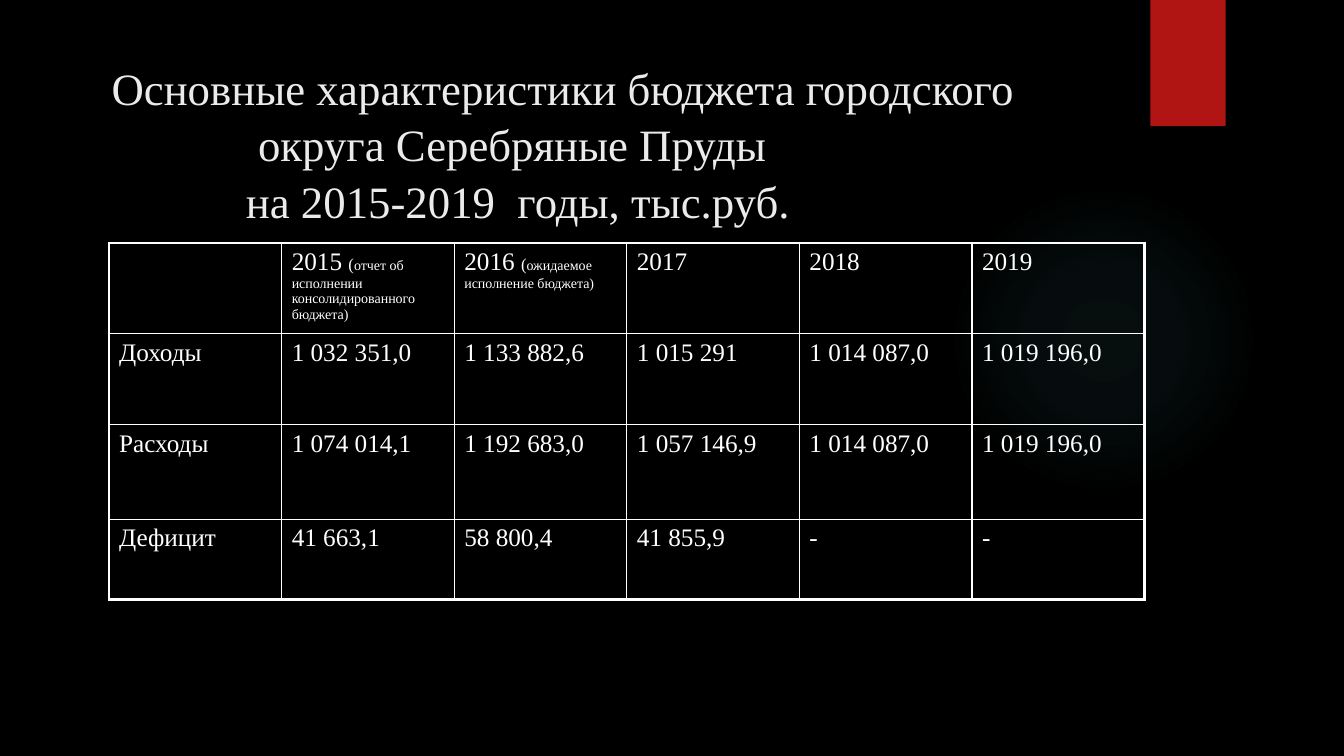
from lxml import etree
from pptx import Presentation
from pptx.dml.color import RGBColor
from pptx.enum.shapes import MSO_SHAPE
from pptx.enum.text import MSO_ANCHOR, PP_ALIGN
from pptx.oxml import parse_xml
from pptx.oxml.ns import nsdecls, qn
from pptx.util import Cm, Pt

OVAL, RECTANGLE = MSO_SHAPE.OVAL, MSO_SHAPE.RECTANGLE
TOP, CENTER = MSO_ANCHOR.TOP, PP_ALIGN.CENTER

THEME = {
    "font": "Times New Roman",
    "background": RGBColor(0x00, 0x00, 0x00),
    "ribbon": RGBColor(0xB0, 0x15, 0x13),
    "title": RGBColor(0xEB, 0xEB, 0xEB),
    "text": RGBColor(0xFF, 0xFF, 0xFF),
    "glow": "50B9C1",
    "border": "FFFFFF",
    "title_size": Pt(32),
    "cell_size": Pt(18),
    "bracket_size": Pt(12),
    "note_size": Pt(10),
    "outer_line": Pt(2.25),
    "inner_line": Pt(1),
}


def add_run(paragraph, text, size, color):
    run = paragraph.add_run()
    run.text = text
    for attribute, value in {"name": THEME["font"], "size": size, "bold": False}.items():
        setattr(run.font, attribute, value)
    run.font.color.rgb = color


def add_border(cell, side, width):
    line = etree.SubElement(cell._tc.get_or_add_tcPr(), qn(f"a:ln{side}"), w=str(width))
    fill = etree.SubElement(line, qn("a:solidFill"))
    etree.SubElement(fill, qn("a:srgbClr"), val=THEME["border"])


prs = Presentation()
prs.slide_width, prs.slide_height = Cm(33.87), Cm(19.05)
slide = prs.slides.add_slide(prs.slide_layouts[6])
slide.background.fill.solid()
slide.background.fill.fore_color.rgb = THEME["background"]

# Soft glow on the right
glow = slide.shapes.add_shape(OVAL, Cm(23.9), Cm(4.65), Cm(7.82), Cm(7.82))
glow.shadow.inherit = False
glow.line.fill.background()
glow.fill.background()
stops = "".join(
    f'<a:gs pos="{position * 1000}"><a:srgbClr val="{THEME["glow"]}">'
    f'<a:alpha val="{opacity * 1000}"/></a:srgbClr></a:gs>'
    for position, opacity in ((0, 7), (36, 6), (69, 0))
)
gradient = parse_xml(
    f'<a:gradFill {nsdecls("a")}><a:gsLst>{stops}</a:gsLst><a:path path="circle">'
    '<a:fillToRect l="50000" t="50000" r="50000" b="50000"/></a:path></a:gradFill>'
)
no_fill = glow._element.spPr.find(qn("a:noFill"))
no_fill.getparent().replace(no_fill, gradient)

# Red ribbon at the top
ribbon = slide.shapes.add_shape(RECTANGLE, Cm(28.99), 0, Cm(1.9), Cm(3.18))
ribbon.shadow.inherit = False
ribbon.fill.solid()
ribbon.fill.fore_color.rgb = THEME["ribbon"]
ribbon.line.fill.background()

# Title, with the first line indented
title = slide.shapes.add_textbox(0, Cm(1.33), Cm(26.11), Cm(4.3)).text_frame
title.word_wrap = True
title.vertical_anchor = TOP
heading = title.paragraphs[0]
heading.alignment = CENTER
heading.line_spacing = 1.05
heading._p.get_or_add_pPr().set("indent", str(Cm(2.27)))
add_run(heading, "Основные характеристики бюджета городского округа Серебряные Пруды ",
        THEME["title_size"], THEME["title"])
heading.add_line_break()
add_run(heading, "на 2015-2019  годы, тыс.руб.", THEME["title_size"], THEME["title"])

# Budget table: a header may carry a note in brackets
years = [
    "",
    ("2015 ", "отчет об исполнении консолидированного бюджета)"),
    ("2016 ", "ожидаемое исполнение бюджета)"),
    "2017", "2018", "2019",
]
budget = [
    years,
    ["Доходы", "1 032 351,0", "1 133 882,6", "1 015 291", "1 014 087,0", "1 019 196,0"],
    ["Расходы", "1 074 014,1", "1 192 683,0", "1 057 146,9", "1 014 087,0", "1 019 196,0"],
    ["Дефицит", "41 663,1", "58 800,4", "41 855,9", "-", "-"],
]
row_heights = [Cm(2.12), Cm(2.29), Cm(2.39), Cm(2.01)]
last_row, last_column = len(budget) - 1, len(years) - 1
table = slide.shapes.add_table(len(budget), len(years), Cm(2.75), Cm(6.12),
                               Cm(26.1), sum(row_heights)).table
table.first_row = table.horz_banding = False
for column in table.columns:
    column.width = Cm(4.35)

for r, (row, height) in enumerate(zip(budget, row_heights)):
    table.rows[r].height = height
    for c, value in enumerate(row):
        cell = table.cell(r, c)
        outer_sides = {"L": c == 0, "R": c == last_column, "T": r == 0, "B": r == last_row}
        for side, is_outer in outer_sides.items():
            add_border(cell, side, THEME["outer_line" if is_outer else "inner_line"])
        cell.fill.background()
        entry = cell.text_frame.paragraphs[0]
        if isinstance(value, tuple):
            year, note = value
            pieces = [(year, "cell_size"), ("(", "bracket_size"), (note, "note_size")]
        else:
            pieces = [(value, "cell_size")] if value else []
        for text, size in pieces:
            add_run(entry, text, THEME[size], THEME["text"])

prs.save("out.pptx")
